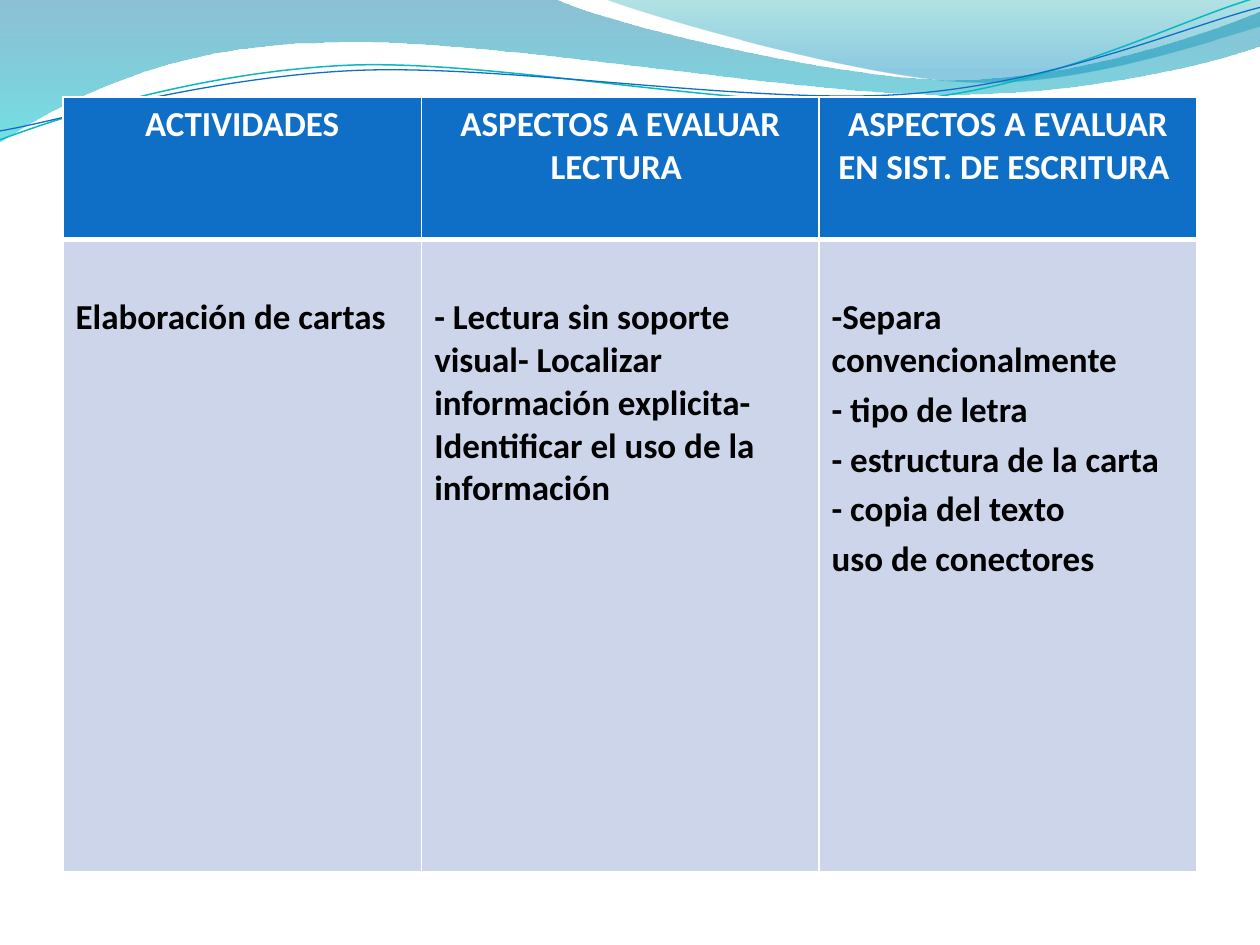
from lxml.etree import SubElement
from pptx import Presentation
from pptx.dml.color import RGBColor
from pptx.enum.text import PP_ALIGN as Align
from pptx.oxml.ns import qn
from pptx.util import Cm, Pt

WHITE = RGBColor(0xFF, 0xFF, 0xFF)
BLACK = RGBColor(0, 0, 0)
BLUE = RGBColor(0x0F, 0x6F, 0xC6)
TEAL = RGBColor(0x0A, 0xB8, 0xBF)
PALE_BLUE = RGBColor(0xCC, 0xD5, 0xEA)
DEEP_BLUE = RGBColor(0x00, 0x74, 0xA1)
CYAN = RGBColor(0x00, 0xC6, 0xCF)
SEA_GREEN = RGBColor(0x00, 0xA1, 0xA9)
SKY_BLUE = RGBColor(0x00, 0x8B, 0xBF)

STRAND_TILT = -2.7

# Outlines in cm: a pair is a straight step, six numbers are a Bezier curve.
LEFT_WAVE = [
    (0, -0.03), (11.18, -0.03),
    (12.09, 0.43, 16.87, 1.6, 19.25, 1.6),
    (21.67, 1.6, 24.33, 0.66, 25.4, 0.23),
    (25.43, 0.91),
    (24.97, 1.12, 22.1, 1.93, 18.95, 1.9),
    (15.8, 1.9, 9.7, 0.71, 6.53, 0.86),
    (3.28, 0.89, 1.17, 2.11, -0.03, 2.87),
    (0, -0.03),
]
RIGHT_WAVE = [
    (12.17, -0.03),
    (12.93, 0.28, 17.32, 1.57, 19.53, 1.65),
    (21.74, 1.75, 24.41, 0.81, 25.4, 0.53),
    (25.4, 0), (12.17, -0.03),
]
TEAL_STRAND = [
    (-0.05, 2.22),
    (1.19, 1.82, 4.01, 1.04, 7.05, 1.05),
    (10.05, 1.07, 15.02, 2.37, 18.07, 2.29),
    (21.13, 2.2, 23.86, 0.9, 25.4, 0.55),
]
BLUE_STRAND = [
    (-0.04, 2.04),
    (1.16, 1.9, 4.17, 1.15, 7.2, 1.16),
    (10.25, 1.18, 15.13, 2.23, 18.19, 2.16),
    (21.21, 2.1, 23.93, 1.06, 25.45, 0.75),
]

HEADINGS = [
    "ACTIVIDADES",
    "ASPECTOS A EVALUAR LECTURA ",
    "ASPECTOS A EVALUAR EN SIST. DE ESCRITURA ",
]
ACTIVITY = [
    ["Elaboración de cartas"],
    ["- Lectura sin soporte visual- Localizar información explicita- "
     "Identificar el uso de la información"],
    ["-Separa convencionalmente ", "- tipo de letra",
     "- estructura de la carta", "- copia del texto", "uso de conectores"],
]


def add_outline(slide, left, top, outline, close):
    """Add a freeform, joining each run of three curve points into a Bezier."""
    start, *rest = [(left + Cm(x), top + Cm(y)) for step in outline
                    for x, y in zip(step[::2], step[1::2])]
    builder = slide.shapes.build_freeform(*start)
    builder.add_line_segments(rest, close=close)
    shape = builder.convert_to_shape()
    shape.shadow.inherit = False

    segments = iter(list(shape._element.iter(qn("a:lnTo"))))
    for step in outline[1:]:
        segment = next(segments)
        if len(step) == 6:
            curve = segment.makeelement(qn("a:cubicBezTo"))
            segment.addprevious(curve)
            for part in (segment, next(segments), next(segments)):
                curve.append(part[0])
                part.getparent().remove(part)
    return shape


def add_wave(slide, left, top, outline, stops):
    """Add a wave shaded downwards; stops are (position, colour, opacity %)."""
    wave = add_outline(slide, left, top, outline, close=True)
    wave.line.fill.background()
    wave.fill.gradient()
    wave.fill.gradient_angle = 270
    for stop, (position, colour, _) in zip(wave.fill.gradient_stops, stops):
        stop.position = position
        stop.color.rgb = colour
    tints = wave._element.iter(qn("a:srgbClr"))
    for tint, (_, _, opacity) in zip(tints, stops):
        SubElement(tint, qn("a:alpha"), val=str(opacity * 1000))


def add_strand(slide, left, top, outline, colour, width):
    strand = add_outline(slide, left, top, outline, close=False)
    strand.rotation = STRAND_TILT
    strand.fill.background()
    strand.line.color.rgb = colour
    strand.line.width = Pt(width)


def add_wave_banner(slide, left, top):
    add_wave(slide, left, top, LEFT_WAVE, [(0, DEEP_BLUE, 45), (1, CYAN, 55)])
    add_wave(slide, left, top, RIGHT_WAVE, [(0, SEA_GREEN, 30), (0.8, SKY_BLUE, 45)])
    add_strand(slide, left, top, TEAL_STRAND, TEAL, 0.85)
    add_strand(slide, left, top, BLUE_STRAND, BLUE, 0.75)


def write_text(frame, lines, colour, align=Align.LEFT, last_align=None,
               size=20, bold=True, font="Calibri", gap=4):
    for i, line in enumerate(lines):
        paragraph = frame.paragraphs[0] if i == 0 else frame.add_paragraph()
        is_last = i == len(lines) - 1
        paragraph.alignment = last_align if is_last and last_align else align
        if i:
            paragraph.space_before = Pt(gap)
        run = paragraph.add_run()
        run.text = line
        run.font.name = font
        run.font.size = Pt(size)
        run.font.bold = bold
        run.font.color.rgb = colour


def style_cell(cell, fill, top_border, bottom_border):
    properties = cell._tc.get_or_add_tcPr()
    for side, width in zip("LRTB", (1, 1, top_border, bottom_border)):
        border = SubElement(properties, qn(f"a:ln{side}"), w=str(Pt(width)))
        solid = SubElement(border, qn("a:solidFill"))
        SubElement(solid, qn("a:srgbClr"), val=str(WHITE))
    cell.fill.solid()
    cell.fill.fore_color.rgb = fill


def add_evaluation_table(slide, left, top, column_widths, row_heights):
    table = slide.shapes.add_table(
        len(row_heights), len(column_widths), left, top,
        sum(column_widths), sum(row_heights)).table
    for row, height in zip(table.rows, row_heights):
        row.height = height
    for i, width in enumerate(column_widths):
        table.columns[i].width = width
        heading, body = table.cell(0, i), table.cell(1, i)
        style_cell(heading, BLUE, 1, 3)
        write_text(heading.text_frame, [HEADINGS[i]], WHITE, align=Align.CENTER)
        style_cell(body, PALE_BLUE, 3, 1)
        body.margin_top = Cm(1.14)
        write_text(body.text_frame, ACTIVITY[i], BLACK,
                   align=Align.JUSTIFY if i == 2 else Align.LEFT,
                   last_align=Align.LEFT)


def main():
    deck = Presentation()
    deck.slide_width, deck.slide_height = Cm(25.4), Cm(19.05)
    slide = deck.slides.add_slide(deck.slide_layouts[6])
    add_wave_banner(slide, Cm(0), Cm(0))
    add_evaluation_table(slide, Cm(1.27), Cm(1.96),
                         [Cm(7.23), Cm(8.01), Cm(7.62)], [Cm(2.87), Cm(12.74)])
    deck.save("out.pptx")


if __name__ == "__main__":
    main()
